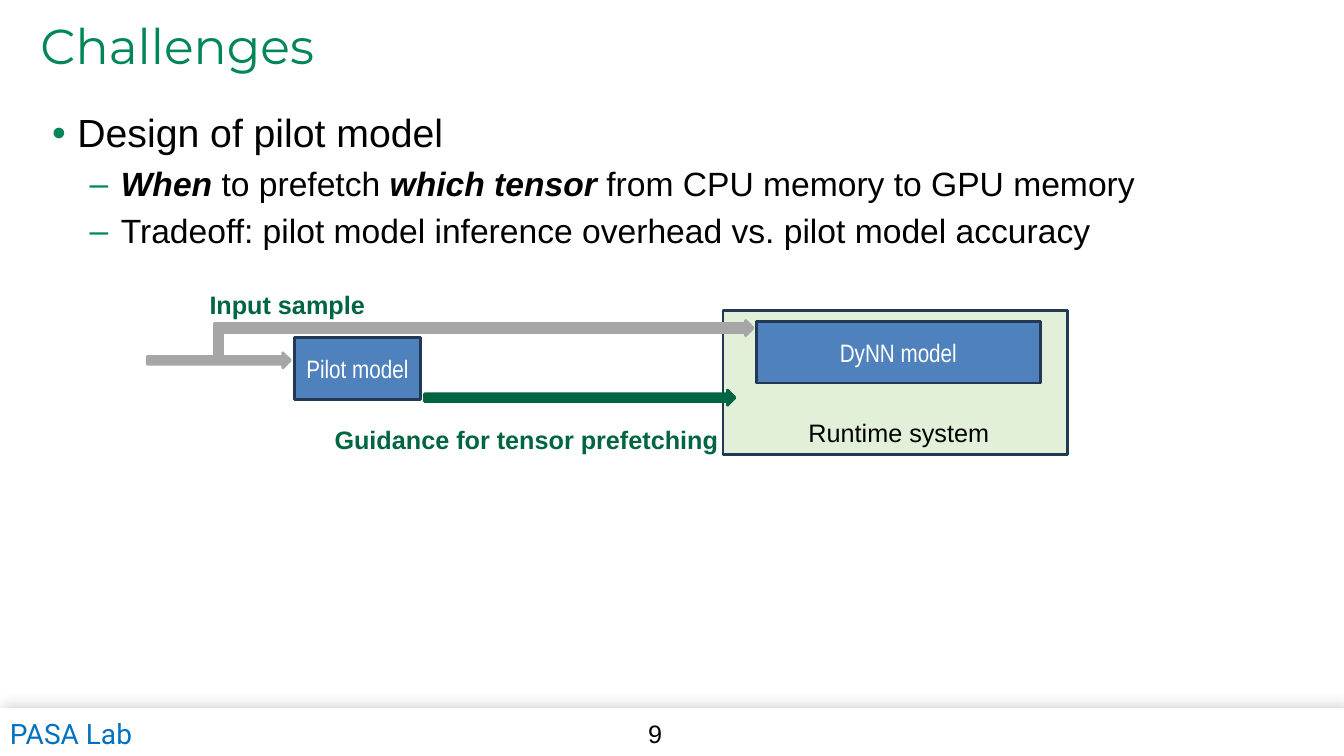
from dataclasses import dataclass

from lxml.etree import SubElement
from pptx import Presentation
from pptx.dml.color import RGBColor
from pptx.enum.shapes import MSO_SHAPE
from pptx.enum.text import MSO_ANCHOR, MSO_AUTO_SIZE, PP_ALIGN
from pptx.oxml.ns import qn
from pptx.util import Inches, Pt

GREEN, DARK_GREEN, GRAY = "008657", "006541", "A6A6A6"
BLUE, NAVY, PALE_GREEN = "4F81BD", "233953", "E2F0D9"
BLACK, WHITE = "000000", "FFFFFF"


@dataclass
class Block:
    kind: MSO_SHAPE
    box: tuple[float, float, float, float]
    fill: str
    line: str
    text: str = ""
    line_width: float = 2
    rotation: float = 0
    adjustments: tuple[float, ...] = ()


@dataclass
class Label:
    box: tuple[float, float, float, float]
    text: str
    color: str = BLACK
    size: float = 18
    font: str = "Arial"
    bold: bool = False


@dataclass
class Bullet:
    level: int
    runs: tuple[tuple[str, bool], ...]  # text, emphasised


@dataclass
class BulletStyle:
    char: str
    size: float
    margin: float
    hanging: float
    space_before: float


FOOTER = Block(MSO_SHAPE.RECTANGLE, (0, 7.03, 13.33, 0.47), WHITE, WHITE, line_width=0.75)
BLOCKS = [
    Block(MSO_SHAPE.RECTANGLE, (7.17, 3.08, 3.42, 1.43), PALE_GREEN, NAVY),
    Block(MSO_SHAPE.RECTANGLE, (2.92, 3.35, 1.25, 0.61), BLUE, NAVY, "Pilot model"),
    Block(MSO_SHAPE.RECTANGLE, (7.5, 3.19, 2.82, 0.61), BLUE, NAVY, "DyNN model"),
    Block(MSO_SHAPE.RIGHT_ARROW, (1.46, 3.5, 1.42, 0.15), GRAY, GRAY),
    Block(MSO_SHAPE.BENT_UP_ARROW, (2.08, 3.21, 5.33, 0.35), GRAY, GRAY,
          rotation=180, adjustments=(0.25, 0.25, 0)),
    Block(MSO_SHAPE.RIGHT_ARROW, (6.47, 3.18, 1, 0.15), GRAY, GRAY),
    Block(MSO_SHAPE.RIGHT_ARROW, (4.21, 3.87, 3.08, 0.15), DARK_GREEN, DARK_GREEN),
]
LABELS = [
    Label((0, 7.06, 1.49, 0.44), "PASA Lab", "0070C0", 20, "Roboto"),
    Label((6.33, 7.08, 0.34, 0.4), "9"),
    Label((7.92, 4.09, 2.08, 0.4), "Runtime system"),
    Label((1.98, 2.82, 1.76, 0.4), "Input sample", DARK_GREEN, bold=True),
    Label((3.22, 4.16, 4.04, 0.4), "Guidance for tensor prefetching", DARK_GREEN, bold=True),
]
BULLET_STYLES = [
    BulletStyle("•", 28, 0.25, 0.25, 14),
    BulletStyle("–", 24, 0.68, 0.31, 8),
]
BULLETS = [
    Bullet(0, (("Design of pilot model", False),)),
    Bullet(1, (("When", True), (" to prefetch ", False), ("which tensor ", True),
               ("from CPU memory to GPU memory", False))),
    Bullet(1, (("Tradeoff: pilot model inference overhead vs. pilot model accuracy", False),)),
]


def rgb(value: str) -> RGBColor:
    return RGBColor.from_string(value)


def inches(box: tuple) -> list:
    return [Inches(v) for v in box]


def style_font(font, name: str, size: float, color: str, bold: bool = False) -> None:
    font.name, font.size, font.bold = name, Pt(size), bold
    font.color.rgb = rgb(color)


def add_block(slide, block: Block):
    sp = slide.shapes.add_shape(block.kind, *inches(block.box))
    sp.shadow.inherit = False
    sp.fill.solid()
    sp.fill.fore_color.rgb = rgb(block.fill)
    sp.line.color.rgb = rgb(block.line)
    sp.line.width = Pt(block.line_width)
    sp.rotation = block.rotation
    for i, value in enumerate(block.adjustments):
        sp.adjustments[i] = value
    if block.text:
        tf = sp.text_frame
        tf.text = block.text
        tf.vertical_anchor = MSO_ANCHOR.MIDDLE
        p = tf.paragraphs[0]
        p.alignment = PP_ALIGN.CENTER
        style_font(p.runs[0].font, "Arial Narrow", 18, WHITE)
    return sp


def add_soft_shadow(sp) -> None:
    effects = sp._element.spPr.find(qn("a:effectLst"))
    shadow = SubElement(effects, qn("a:outerShdw"), blurRad=str(Pt(10)),
                        dist=str(Pt(3)), dir=str(315 * 60000), rotWithShape="0")
    color = SubElement(shadow, qn("a:srgbClr"), val=BLACK)
    SubElement(color, qn("a:alpha"), val="20000")


def add_label(slide, label: Label) -> None:
    tf = slide.shapes.add_textbox(*inches(label.box)).text_frame
    tf.word_wrap = False
    tf.auto_size = MSO_AUTO_SIZE.SHAPE_TO_FIT_TEXT
    tf.text = label.text
    style_font(tf.paragraphs[0].runs[0].font, label.font, label.size, label.color, label.bold)


def set_title(slide, text: str) -> None:
    title = slide.shapes.title
    title.left, title.top, title.width, title.height = inches((0.3, 0.19, 12, 0.61))
    tf = title.text_frame
    tf.text = text
    tf.word_wrap = True
    tf.auto_size = MSO_AUTO_SIZE.NONE
    tf.vertical_anchor = MSO_ANCHOR.TOP
    p = tf.paragraphs[0]
    p.alignment = PP_ALIGN.LEFT
    p.line_spacing = 0.85
    style_font(p.runs[0].font, "Montserrat", 35, GREEN)


def add_bullets(slide, bullets: list[Bullet]) -> None:
    tf = slide.shapes.add_textbox(*inches((0.42, 1.08, 12, 3.19))).text_frame
    tf.word_wrap = True
    for i, bullet in enumerate(bullets):
        style = BULLET_STYLES[bullet.level]
        p = tf.add_paragraph() if i else tf.paragraphs[0]
        pPr = p._p.get_or_add_pPr()
        pPr.set("marL", str(Inches(style.margin)))
        pPr.set("indent", str(-Inches(style.hanging)))
        SubElement(SubElement(pPr, qn("a:buClr")), qn("a:srgbClr"), val=GREEN)
        SubElement(pPr, qn("a:buFont"), typeface="Arial")
        SubElement(pPr, qn("a:buChar"), char=style.char)
        p.level = bullet.level
        p.line_spacing = 0.9
        if i:
            p.space_before = Pt(style.space_before)
        for text, emphasised in bullet.runs:
            r = p.add_run()
            r.text = text
            style_font(r.font, "Arial", style.size, BLACK, emphasised)
            r.font.italic = emphasised


def main() -> None:
    prs = Presentation()
    prs.slide_width, prs.slide_height = Inches(13.33), Inches(7.5)
    slide = prs.slides.add_slide(prs.slide_layouts[5])
    set_title(slide, "Challenges")
    add_soft_shadow(add_block(slide, FOOTER))
    for block in BLOCKS:
        add_block(slide, block)
    add_bullets(slide, BULLETS)
    for label in LABELS:
        add_label(slide, label)
    prs.save("out.pptx")


if __name__ == "__main__":
    main()
